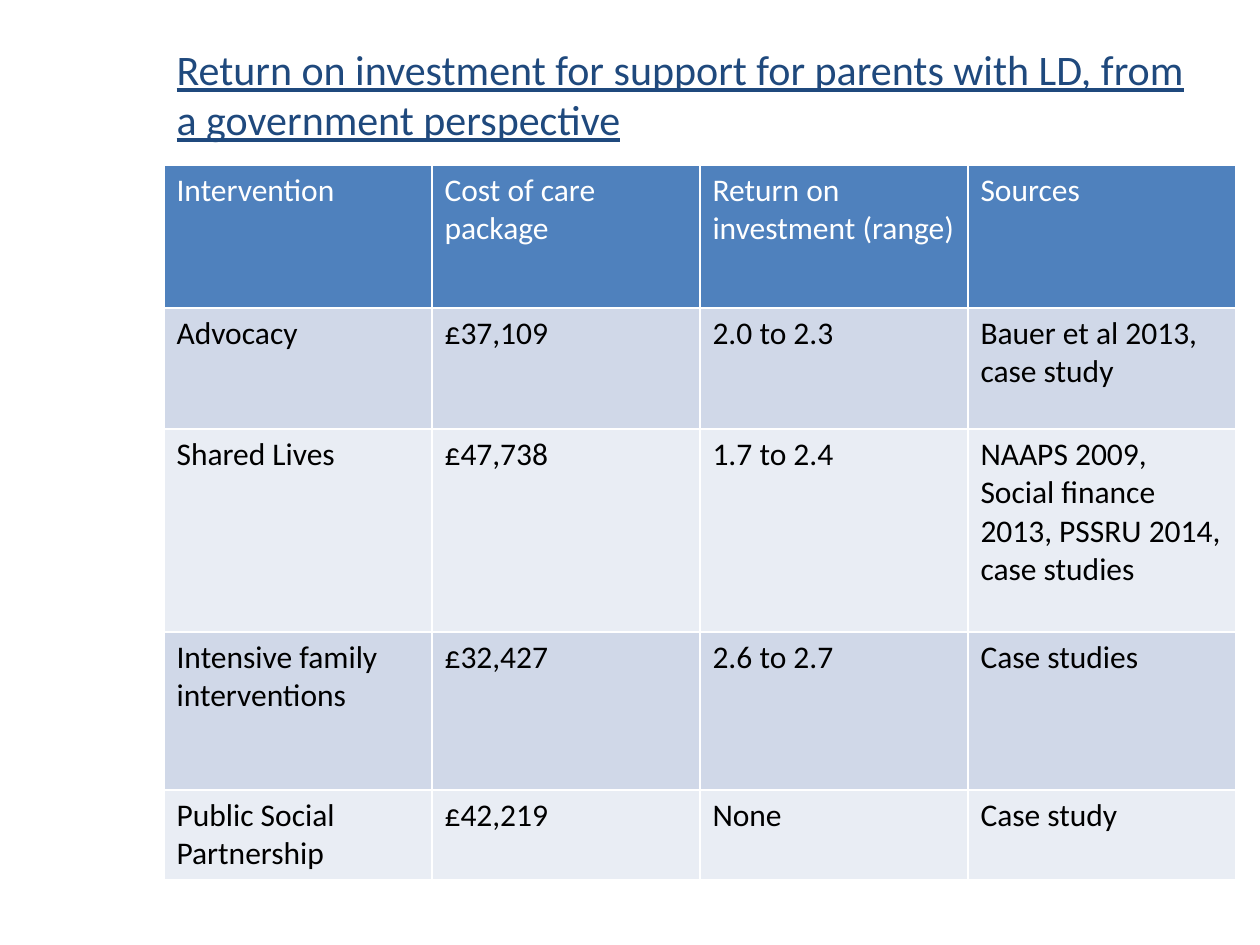
from typing import NamedTuple

import pptx
import pptx.dml.color
import pptx.enum.text
import pptx.util

RGBColor = pptx.dml.color.RGBColor
NAVY = RGBColor(0x1F, 0x49, 0x7D)
BLUE = RGBColor(0x4F, 0x81, 0xBD)
BAND_DARK = RGBColor(0xD0, 0xD8, 0xE8)
BAND_LIGHT = RGBColor(0xE9, 0xED, 0xF4)
WHITE = RGBColor(0xFF, 0xFF, 0xFF)
BLACK = RGBColor(0x00, 0x00, 0x00)

PIXELS_PER_INCH = 126
LEFT = 164
COLUMN_WIDTH = 268
TITLE = "Return on investment for support for parents with LD, from a government perspective"


class TableRow(NamedTuple):
    height: int
    texts: tuple[str, ...]


ROWS = (
    TableRow(143, ("Intervention", "Cost of care package", "Return on investment (range)", "Sources")),
    TableRow(121, ("Advocacy", "£37,109", "2.0 to 2.3", "Bauer et al 2013, case study")),
    TableRow(203, ("Shared Lives", "£47,738", "1.7 to 2.4",
                   "NAAPS 2009, Social finance 2013, PSSRU 2014, case studies")),
    TableRow(158, ("Intensive family interventions", "£32,427", "2.6 to 2.7", "Case studies")),
    TableRow(89, ("Public Social Partnership", "£42,219", "None", "Case study")),
)


def px(length: int) -> pptx.util.Emu:
    return pptx.util.Emu(round(length * 914400 / PIXELS_PER_INCH))


def write_text(text_frame, text: str, size: int, color: RGBColor, underline: bool = False) -> None:
    text_frame.text = text
    paragraph = text_frame.paragraphs[0]
    paragraph.alignment = pptx.enum.text.PP_ALIGN.LEFT
    font = paragraph.runs[0].font
    formats = {"name": "Calibri", "size": pptx.util.Pt(size), "bold": False, "underline": underline}
    for name, value in formats.items():
        setattr(font, name, value)
    font.color.rgb = color


def format_title(shape) -> None:
    bounds = {"left": px(LEFT), "top": px(37), "width": px(1062), "height": px(883)}
    for name, value in bounds.items():
        setattr(shape, name, value)
    frame_formats = {
        "word_wrap": True,
        "auto_size": pptx.enum.text.MSO_AUTO_SIZE.NONE,
        "vertical_anchor": pptx.enum.text.MSO_ANCHOR.TOP,
    }
    for name, value in frame_formats.items():
        setattr(shape.text_frame, name, value)
    write_text(shape.text_frame, TITLE, 24, NAVY, underline=True)


def add_investment_table(slide, rows: tuple[TableRow, ...]) -> None:
    column_count = len(rows[0].texts)
    height = sum(row.height for row in rows)
    table = slide.shapes.add_table(
        len(rows), column_count, px(LEFT), px(165), px(column_count * COLUMN_WIDTH), px(height)
    ).table
    for row_index, row in enumerate(rows):
        table.rows[row_index].height = px(row.height)
        # Blue header, then alternating bands
        if row_index == 0:
            fill_color, text_color = BLUE, WHITE
        else:
            fill_color, text_color = (BAND_DARK if row_index % 2 else BAND_LIGHT), BLACK
        for cell, text in zip(table.rows[row_index].cells, row.texts):
            cell.fill.solid()
            cell.fill.fore_color.rgb = fill_color
            write_text(cell.text_frame, text, 18, text_color)


def main() -> None:
    presentation = pptx.Presentation()
    presentation.slide_width = pptx.util.Inches(10)
    presentation.slide_height = pptx.util.Inches(7.5)
    slide = presentation.slides.add_slide(presentation.slide_layouts.get_by_name("Title Only"))

    # Heading
    format_title(slide.shapes.title)

    # Costs and returns by intervention
    add_investment_table(slide, ROWS)

    presentation.save("out.pptx")


if __name__ == "__main__":
    main()
